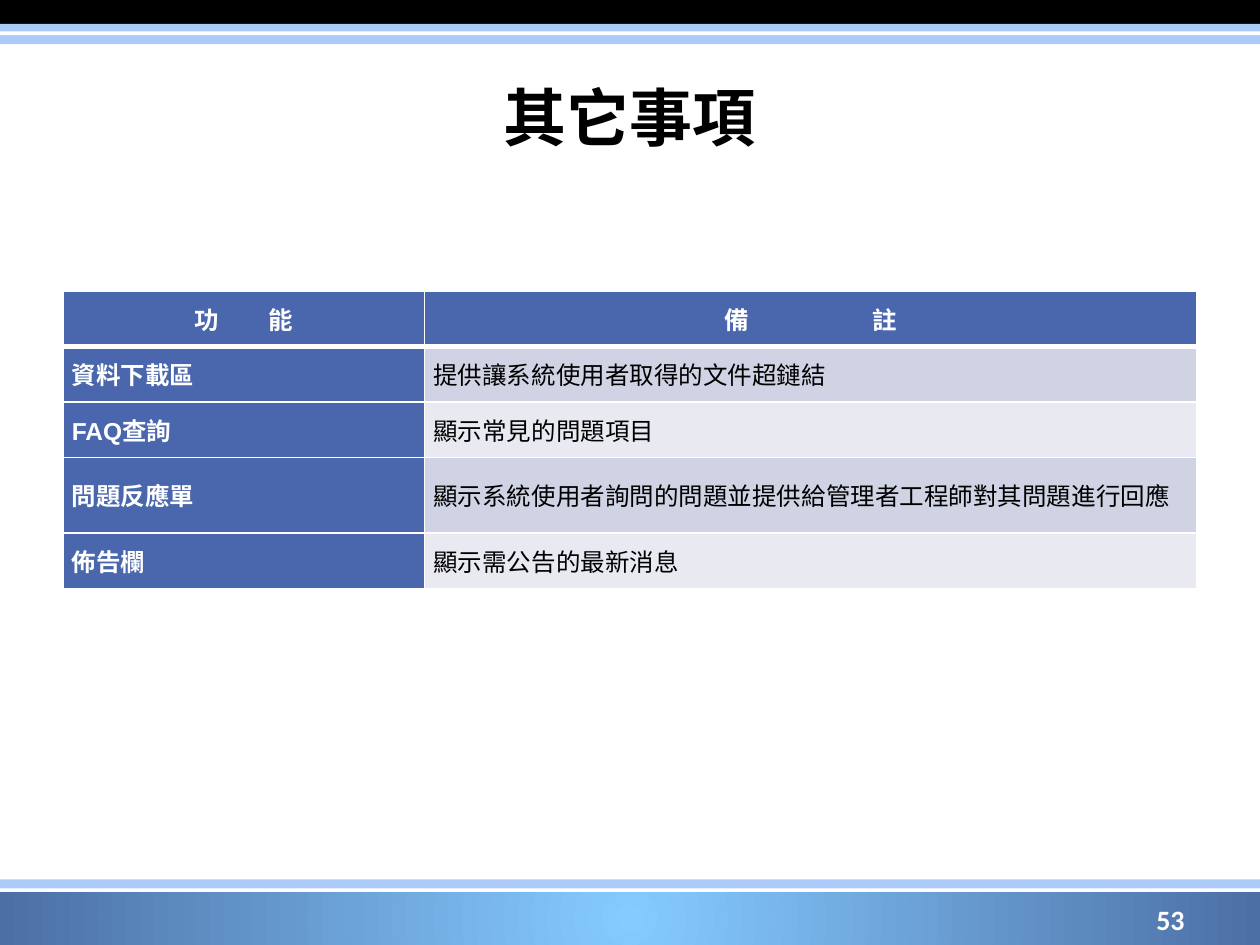
from typing import NamedTuple

from lxml.etree import SubElement
from pptx import Presentation
from pptx.dml.color import RGBColor
from pptx.enum.shapes import MSO_SHAPE
from pptx.enum.text import MSO_ANCHOR, PP_ALIGN
from pptx.oxml.ns import qn
from pptx.util import Inches, Pt

BLACK = RGBColor(0x00, 0x00, 0x00)
WHITE = RGBColor(0xFF, 0xFF, 0xFF)
PALE = RGBColor(0xAC, 0xCB, 0xF9)
SKY = RGBColor(0x85, 0xCB, 0xFF)
STEEL = RGBColor(0x4C, 0x70, 0xA6)
BLUE = RGBColor(0x4A, 0x66, 0xAC)
TINTS = (RGBColor(0xD0, 0xD3, 0xE3), RGBColor(0xE9, 0xEA, 0xF1))
WIDTH = 10


class Band(NamedTuple):
    top: float
    height: float
    color: RGBColor


class Look(NamedTuple):
    font: str
    size: float
    color: RGBColor
    bold: bool
    align: PP_ALIGN


class Label(NamedTuple):
    text: str
    left: float
    top: float
    width: float
    height: float
    look: Look


class Row(NamedTuple):
    name: str
    note: str
    height: float = 0.44


class Head(NamedTuple):
    first: str
    last: str
    gap: int  # points between the two characters


BANDS = [
    Band(0, 0.19, BLACK),
    Band(0.19, 0.16, PALE),
    Band(0.25, 0.03, WHITE),
    Band(7.07, 0.43, SKY),
    Band(6.98, 0.1, PALE),
    Band(7.05, 0.03, WHITE),
]
LABELS = [
    Label("其它事項", 0.5, 0.3, 9, 1.25,
          Look("Karla", 36, BLACK, True, PP_ALIGN.CENTER)),
    Label("53", 7.17, 7.1, 2.33, 0.4,
          Look("Calibri", 16, WHITE, True, PP_ALIGN.RIGHT)),
]
HEADS = [Head("功", "能", 28), Head("備", "註", 70)]
ROWS = [
    Row("資料下載區", "提供讓系統使用者取得的文件超鏈結"),
    Row("FAQ查詢", "顯示常見的問題項目"),
    Row("問題反應單", "顯示系統使用者詢問的問題並提供給管理者工程師對其問題進行回應", 0.6),
    Row("佈告欄", "顯示需公告的最新消息"),
]
COLS = (2.87, 6.13)
TITLE = Look("Arial", 14, WHITE, True, PP_ALIGN.CENTER)
NAME = TITLE._replace(align=PP_ALIGN.LEFT)
NOTE = NAME._replace(color=BLACK, bold=False)


def add_band(slide, band: Band):
    shape = slide.shapes.add_shape(
        MSO_SHAPE.RECTANGLE, 0, Inches(band.top), Inches(WIDTH), Inches(band.height))
    shape.shadow.inherit = False
    shape.line.fill.background()
    shape.fill.solid()
    shape.fill.fore_color.rgb = band.color
    return shape


def make_glow(shape, inner: RGBColor, outer: RGBColor) -> None:
    """Fill a shape with a gradient that spreads from its centre."""
    shape.fill.gradient()
    for stop, color in zip(shape.fill.gradient_stops, (inner, outer)):
        stop.color.rgb = color
    grad = shape._element.spPr.find(qn("a:gradFill"))
    grad.remove(grad.find(qn("a:lin")))
    ring = SubElement(grad, qn("a:path"), {"path": "circle"})
    SubElement(ring, qn("a:fillToRect"), dict.fromkeys("ltrb", "50000"))


def add_run(para, text: str, look: Look):
    para.alignment = look.align
    run = para.add_run()
    run.text = text
    font = run.font
    font.name, font.size, font.bold = look.font, Pt(look.size), look.bold
    font.color.rgb = look.color
    return run


def add_label(slide, label: Label) -> None:
    box = slide.shapes.add_textbox(
        Inches(label.left), Inches(label.top), Inches(label.width), Inches(label.height))
    frame = box.text_frame
    frame.word_wrap = True
    frame.vertical_anchor = MSO_ANCHOR.MIDDLE
    add_run(frame.paragraphs[0], label.text, label.look)


def set_cell(cell, fill: RGBColor, top: int = 1, base: int = 1):
    """Style a cell and return its paragraph; top and base are line widths."""
    cell.vertical_anchor = MSO_ANCHOR.MIDDLE
    cell.margin_left = cell.margin_right = Inches(0.07)
    cell.margin_top = cell.margin_bottom = 0
    props = cell._tc.get_or_add_tcPr()
    for side, width in (("L", 1), ("R", 1), ("T", top), ("B", base)):
        line = SubElement(props, qn(f"a:ln{side}"), {"w": str(Pt(width))})
        paint = SubElement(line, qn("a:solidFill"))
        SubElement(paint, qn("a:srgbClr"), {"val": str(WHITE)})
    cell.fill.solid()
    cell.fill.fore_color.rgb = fill
    para = cell.text_frame.paragraphs[0]
    para.space_after = Pt(1.2)
    return para


def add_grid(slide) -> None:
    highs = [0.44] + [row.height for row in ROWS]
    table = slide.shapes.add_table(
        len(highs), len(COLS), Inches(0.5), Inches(2.31),
        Inches(sum(COLS)), Inches(sum(highs))).table
    for col, width in zip(table.columns, COLS):
        col.width = Inches(width)
    for line, height in zip(table.rows, highs):
        line.height = Inches(height)

    # Header row, its characters set apart by letter spacing
    for x, head in enumerate(HEADS):
        para = set_cell(table.cell(0, x), BLUE, base=3)
        run = add_run(para, head.first, TITLE)
        run.font._element.set("spc", str(head.gap * 100))
        add_run(para, head.last, TITLE)

    # Body rows
    for y, row in enumerate(ROWS, 1):
        top = 3 if y == 1 else 1
        tint = TINTS[(y - 1) % 2]
        add_run(set_cell(table.cell(y, 0), BLUE, top), row.name, NAME)
        add_run(set_cell(table.cell(y, 1), tint, top), row.note, NOTE)


def main() -> None:
    deck = Presentation()
    deck.slide_width, deck.slide_height = Inches(WIDTH), Inches(7.5)
    slide = deck.slides.add_slide(deck.slide_layouts[6])

    # Top and bottom bands
    for band in BANDS:
        shape = add_band(slide, band)
        if band.color == SKY:
            make_glow(shape, SKY, STEEL)

    # Title and page number
    for label in LABELS:
        add_label(slide, label)

    # Table of functions
    add_grid(slide)
    deck.save("out.pptx")


if __name__ == "__main__":
    main()
